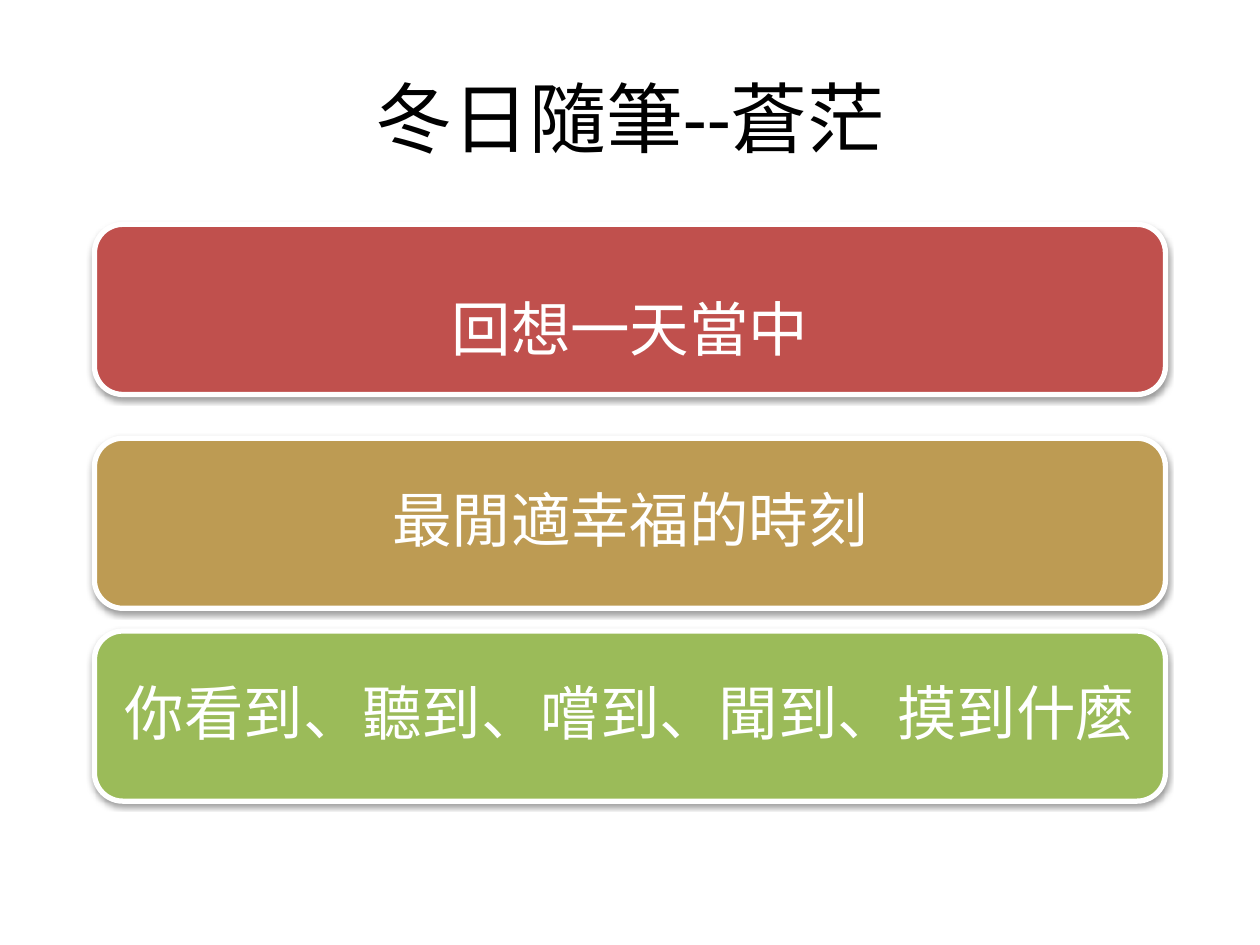
from dataclasses import dataclass

from lxml import etree
from pptx import Presentation
from pptx.dml.color import RGBColor
from pptx.enum.shapes import MSO_SHAPE
from pptx.enum.text import MSO_ANCHOR, PP_ALIGN
from pptx.oxml.ns import qn
from pptx.util import Pt

ROUNDED = MSO_SHAPE.ROUNDED_RECTANGLE
CENTER = PP_ALIGN.CENTER
MIDDLE = MSO_ANCHOR.MIDDLE
TITLE_ONLY = 5


@dataclass(frozen=True)
class Theme:
    font: str = "Calibri"
    title_size: float = 44
    band_size: float = 34
    black: str = "000000"
    white: str = "FFFFFF"
    red: str = "C0504D"
    gold: str = "BD9B53"
    green: str = "9BBB59"


@dataclass(frozen=True)
class Band:
    text: str
    top: float
    color: str
    line_spacing: float = 0.9


THEME = Theme()
BAND_LEFT, BAND_WIDTH, BAND_HEIGHT = 54, 612, 97.2
BAND_INSET = 10
BANDS = (
    Band("回想一天當中", 128.2, THEME.red, line_spacing=1.5),
    Band("最閒適幸福的時刻", 250.4, THEME.gold),
    Band("你看到、聽到、嚐到、聞到、摸到什麼", 360.6, THEME.green),
)


def write_text(shape, text: str, *, size: float, color: str, inset: float | None = None,
               line_spacing: float | None = None, space_after: float = 0) -> None:
    frame = shape.text_frame
    frame.word_wrap = True
    frame.vertical_anchor = MIDDLE
    if inset is not None:
        frame.margin_left = frame.margin_right = Pt(inset)
        frame.margin_top = frame.margin_bottom = Pt(inset)
    paragraph = frame.paragraphs[0]
    paragraph.alignment = CENTER
    paragraph.line_spacing = line_spacing
    paragraph.space_after = Pt(space_after)
    run = paragraph.add_run()
    run.text = text
    run.font.name = THEME.font
    run.font.size = Pt(size)
    run.font.color.rgb = RGBColor.from_string(color)


def add_shadow(shape) -> None:
    """Give the shape a soft shadow that falls straight down."""
    shape.shadow.inherit = False
    effects = shape._element.spPr.find(qn("a:effectLst"))
    shadow = etree.SubElement(effects, qn("a:outerShdw"), blurRad=str(Pt(3.1)),
                              dist=str(Pt(1.6)), dir="5400000", rotWithShape="0")
    color = etree.SubElement(shadow, qn("a:srgbClr"), val=THEME.black)
    etree.SubElement(color, qn("a:alpha"), val="38000")


def add_title(slide, text: str) -> None:
    title = slide.shapes.title
    title.left, title.top = Pt(36), Pt(21.6)
    title.width, title.height = Pt(648), Pt(90)
    write_text(title, text, size=THEME.title_size, color=THEME.black)


def add_band(slide, band: Band) -> None:
    shape = slide.shapes.add_shape(ROUNDED, Pt(BAND_LEFT), Pt(band.top),
                                   Pt(BAND_WIDTH), Pt(BAND_HEIGHT))
    shape.fill.solid()
    shape.fill.fore_color.rgb = RGBColor.from_string(band.color)
    shape.line.color.rgb = RGBColor.from_string(THEME.white)
    shape.line.width = Pt(3)
    add_shadow(shape)
    write_text(shape, band.text, size=THEME.band_size, color=THEME.white,
               inset=BAND_INSET, line_spacing=band.line_spacing, space_after=12)


def main() -> None:
    presentation = Presentation()
    presentation.slide_width, presentation.slide_height = Pt(720), Pt(540)
    slide = presentation.slides.add_slide(presentation.slide_layouts[TITLE_ONLY])
    add_title(slide, "冬日隨筆--蒼茫")
    for band in BANDS:
        add_band(slide, band)
    presentation.save("out.pptx")


if __name__ == "__main__":
    main()
